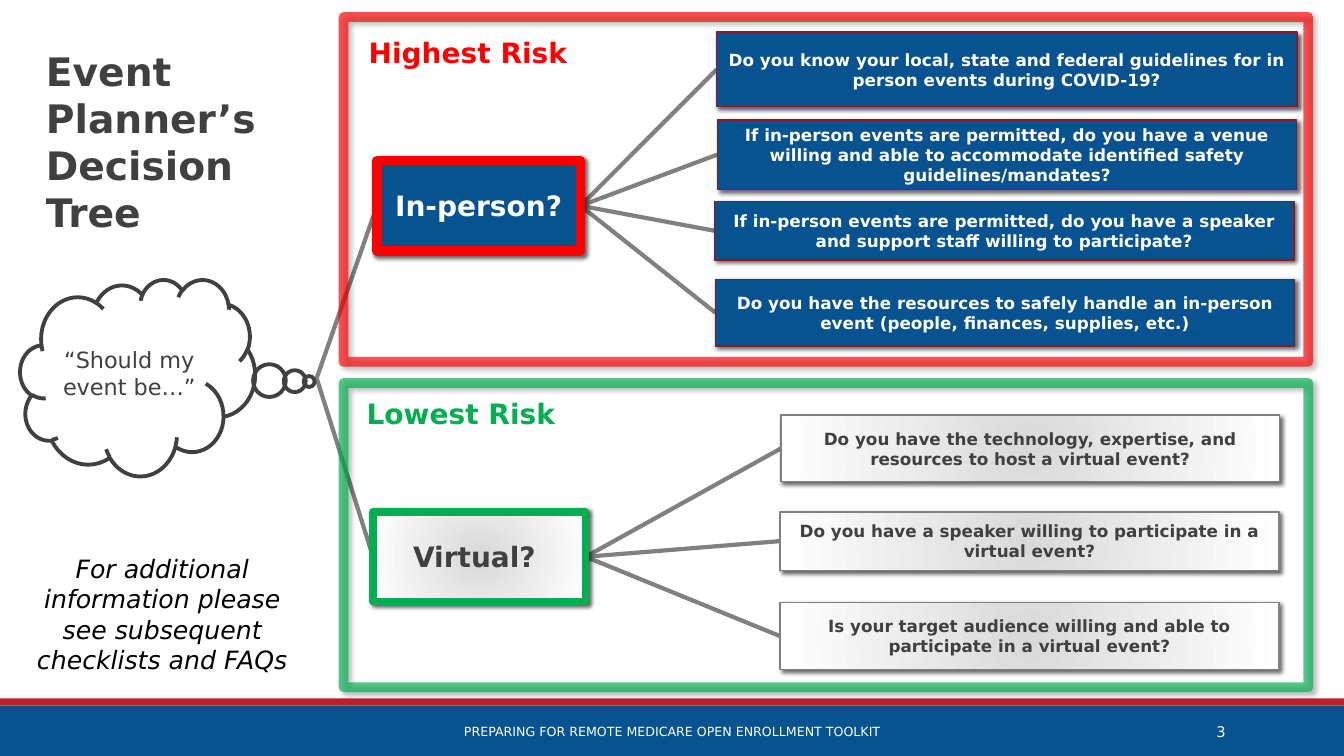
"""Build the event planner's decision tree slide."""
from lxml.etree import SubElement
from pptx import Presentation
from pptx.dml.color import RGBColor
from pptx.enum.shapes import MSO_CONNECTOR, MSO_SHAPE
from pptx.enum.text import MSO_ANCHOR as Anchor, MSO_AUTO_SIZE as AutoSize, PP_ALIGN as Align
from pptx.oxml.ns import qn
from pptx.util import Cm, Pt

BLUE = RGBColor(0x07, 0x52, 0x90)
CRIMSON = RGBColor(0xBF, 0x1E, 0x2D)
MAROON = RGBColor(0x8F, 0x17, 0x22)
RED = RGBColor(0xFF, 0x00, 0x00)
GREEN = RGBColor(0x00, 0xB0, 0x50)
GREY = RGBColor(0x80, 0x80, 0x80)
SILVER = RGBColor(0xD9, 0xD9, 0xD9)
CHARCOAL = RGBColor(0x40, 0x40, 0x40)
WHITE = RGBColor(0xFF, 0xFF, 0xFF)
BLACK = RGBColor(0x00, 0x00, 0x00)

IN_PERSON_HUB = (9.5, 4.04, 5.13, 2.29)
VIRTUAL_HUB = (9.4, 12.9, 5.36, 2.26)
THOUGHT_END = (7.98, 9.53)

IN_PERSON_QUESTIONS = [
    ((18.06, 0.81, 14.63, 1.88),
     "Do you know your local, state and federal guidelines for in person events during COVID-19?"),
    ((18.08, 3.02, 14.6, 1.75),
     "If in-person events are permitted, do you have a venue willing and able to "
     "accommodate identified safety guidelines/mandates?"),
    ((18.01, 5.08, 14.6, 1.47),
     "If in-person events are permitted, do you have a speaker and support staff "
     "willing to participate?"),
    ((18.03, 7.04, 14.6, 1.68),
     "Do you have the resources to safely handle an in-person event "
     "(people, finances, supplies, etc.)"),
]
VIRTUAL_QUESTIONS = [
    ((19.68, 10.46, 12.57, 1.68),
     "Do you have the technology, expertise, and resources to host a virtual event?"),
    ((19.66, 12.9, 12.57, 1.47),
     "Do you have a speaker willing to participate in a virtual event?"),
    ((19.66, 15.19, 12.57, 1.68),
     "Is your target audience willing and able to participate in a virtual event?"),
]


def write(frame, text, size=12, color=CHARCOAL, bold=False, italic=False,
          align=Align.CENTER, anchor=Anchor.MIDDLE, wrap=True):
    """Put formatted text into a text frame."""
    frame.word_wrap = wrap
    frame.vertical_anchor = anchor
    paragraph = frame.paragraphs[0]
    paragraph.alignment = align
    run = paragraph.add_run()
    run.text = text
    font = run.font
    font.name, font.size, font.color.rgb = Board.font, Pt(size), color
    font.bold, font.italic = bold, italic


def left_middle(box):
    """Return the middle of a box's left edge."""
    left, top, _, height = box
    return left, top + height / 2


def right_middle(box):
    """Return the middle of a box's right edge."""
    left, top, width, height = box
    return left + width, top + height / 2


class Board:
    """Hold the style and the current slide."""

    font = "DejaVu Sans"

    def __init__(self, slide):
        self.slide = slide

    def shape(self, box, fill=None, line=None, weight=1.0, kind=MSO_SHAPE.RECTANGLE):
        """Add a preset shape without a shadow."""
        shape = self.slide.shapes.add_shape(kind, *map(Cm, box))
        shape.shadow.inherit = False
        if fill == SILVER:
            self.glow(shape.fill)
        elif fill is not None:
            shape.fill.solid()
            shape.fill.fore_color.rgb = fill
        else:
            shape.fill.background()
        if line is None:
            shape.line.fill.background()
        else:
            shape.line.color.rgb = line
            shape.line.width = Pt(weight)
            SubElement(shape.line._get_or_add_ln(), qn("a:round"))
        return shape

    def glow(self, fill):
        """Fill from silver in the middle to white at the edge."""
        fill.gradient()
        for stop, color in zip(fill.gradient_stops, (SILVER, WHITE)):
            stop.color.rgb = color
        gradient = fill._xPr.find(qn("a:gradFill"))
        gradient.remove(gradient.find(qn("a:lin")))
        radial = SubElement(gradient, qn("a:path"), {"path": "circle"})
        SubElement(radial, qn("a:fillToRect"), dict.fromkeys("ltrb", "50000"))

    def shade(self, shape, blur, distance, alpha):
        """Cast a black shadow to the lower right."""
        effects = shape._element.spPr.find(qn("a:effectLst"))
        shadow = SubElement(effects, qn("a:outerShdw"), {
            "blurRad": str(Pt(blur)), "dist": str(Pt(distance)),
            "dir": "2700000", "algn": "tl", "rotWithShape": "0"})
        tone = SubElement(shadow, qn("a:srgbClr"), val=str(BLACK))
        SubElement(tone, qn("a:alpha"), val=str(alpha * 1000))

    def card(self, box, text, fill, line, weight=1.0, **style):
        """Add a shaded box with bold text."""
        card = self.shape(box, fill, line, weight)
        self.shade(card, 3, 2, 60)
        write(card.text_frame, text, bold=True, **style)

    def risk_frame(self, box, color):
        """Add a translucent outline around one branch."""
        outline = self.shape(box, line=color, weight=7)
        self.shade(outline, 4, 3, 40)
        tone = outline.line._get_or_add_ln().find(".//" + qn("a:srgbClr"))
        SubElement(tone, qn("a:alpha"), val="65000")

    def branch(self, start, end):
        """Add a grey line between two points."""
        line = self.slide.shapes.add_connector(MSO_CONNECTOR.STRAIGHT, *map(Cm, start + end))
        line.line.color.rgb = GREY
        line.line.width = Pt(3)
        SubElement(line._element.spPr, qn("a:effectLst"))

    def label(self, box, text, grow=True, **style):
        """Add a text box."""
        frame = self.slide.shapes.add_textbox(*map(Cm, box)).text_frame
        write(frame, text, **style)
        frame.auto_size = AutoSize.SHAPE_TO_FIT_TEXT if grow else AutoSize.NONE


def main():
    """Build and save the slide."""
    deck = Presentation()
    deck.slide_width, deck.slide_height = Cm(33.87), Cm(19.05)
    board = Board(deck.slides.add_slide(deck.slide_layouts[6]))

    board.shape((0, 17.78, 33.87, 1.27), BLUE)
    board.shape((0, 17.6, 33.87, 0.18), CRIMSON)

    sides = [
        (IN_PERSON_HUB, "In-person?", RED, 6.75, IN_PERSON_QUESTIONS, BLUE, MAROON, WHITE),
        (VIRTUAL_HUB, "Virtual? ", GREEN, 5.25, VIRTUAL_QUESTIONS, SILVER, GREY, CHARCOAL),
    ]
    for hub, choice, accent, weight, questions, fill, edge, ink in sides:
        board.branch(THOUGHT_END, left_middle(hub))
        for box, _ in questions:
            board.branch(right_middle(hub), left_middle(box))
        board.card(hub, choice, fill, accent, weight, size=20, color=ink)
        for box, question in questions:
            board.card(box, question, fill, edge, color=ink)

    risks = [
        ((8.66, 0.43, 24.31, 8.69), (9.04, 0.76, 5.77, 1.12), "Highest Risk", RED),
        ((8.66, 9.65, 24.31, 7.67), (8.99, 9.86, 5.33, 1.12), "Lowest Risk", GREEN),
    ]
    for outline, heading, risk, color in risks:
        board.risk_frame(outline, color)
        board.label(heading, risk, size=20, color=color, bold=True,
                    align=Align.LEFT, anchor=Anchor.TOP, wrap=False)

    board.label((0.91, 1.07, 7.42, 5.05), "Event Planner’s Decision Tree", size=28,
                bold=True, align=Align.LEFT, anchor=Anchor.TOP)
    board.label((0.56, 13.82, 7.06, 3.33),
                "For additional information please see subsequent checklists and FAQs",
                size=18, color=BLACK, italic=True, anchor=Anchor.TOP)

    thought = board.shape((0.51, 7.04, 5.92, 4.95), line=CHARCOAL, weight=2.75,
                          kind=MSO_SHAPE.CLOUD_CALLOUT)
    thought.adjustments[0], thought.adjustments[1] = 0.73, 0.02
    write(thought.text_frame, "“Should my event be…”", size=16)

    board.label((10.24, 17.93, 13.39, 1.02),
                "PREPARING FOR REMOTE MEDICARE OPEN ENROLLMENT TOOLKIT",
                grow=False, size=9, color=WHITE)
    board.label((27.51, 17.93, 3.63, 1.02), "3", grow=False, size=10.5,
                color=WHITE, align=Align.RIGHT)

    deck.save("out.pptx")


if __name__ == "__main__":
    main()
